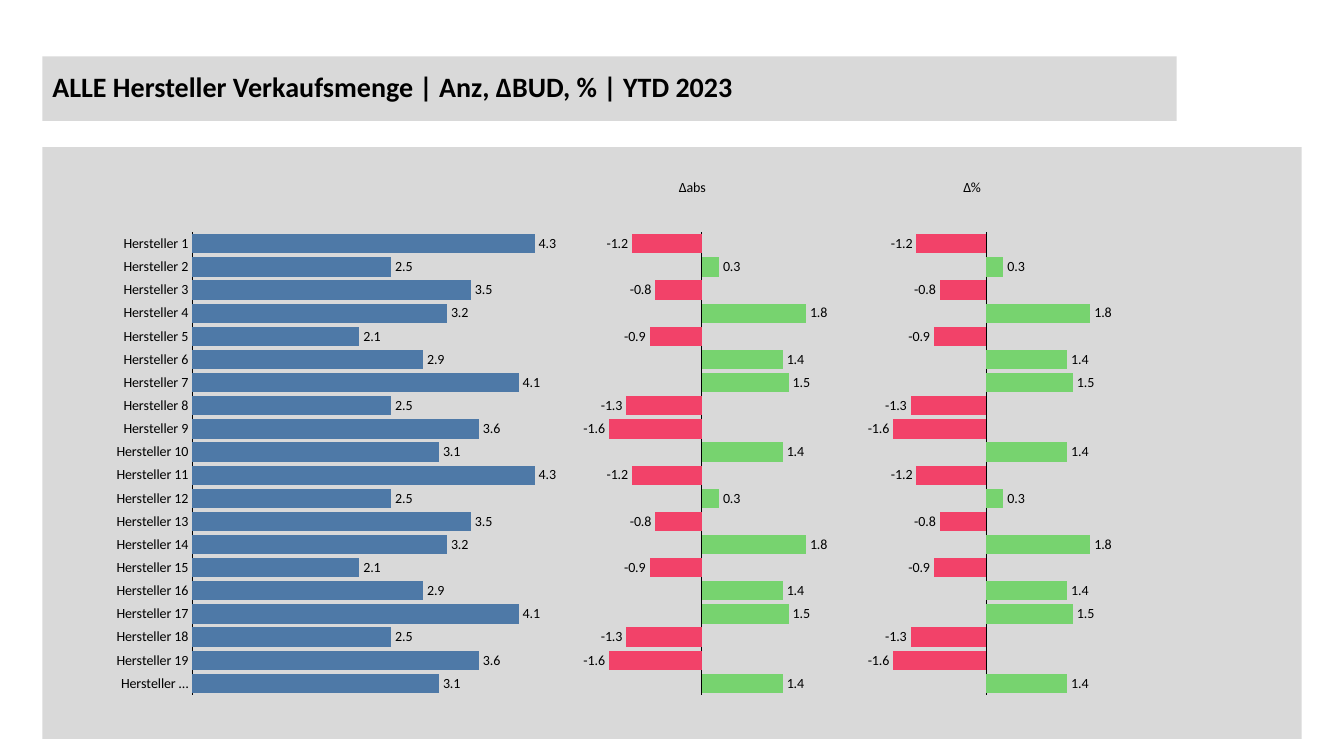
from lxml.etree import SubElement
from pptx import Presentation
from pptx.chart.data import CategoryChartData
from pptx.dml.color import RGBColor
from pptx.enum.chart import XL_CHART_TYPE, XL_LABEL_POSITION, XL_TICK_LABEL_POSITION, XL_TICK_MARK
from pptx.enum.shapes import MSO_SHAPE
from pptx.enum.text import MSO_ANCHOR, PP_ALIGN
from pptx.oxml import parse_xml
from pptx.oxml.ns import nsdecls, qn
from pptx.util import Inches, Pt

COLORS = {
    "panel": "D9D9D9",
    "text": "000000",
    "volume": "4E79A7",
    "gain": "77D36F",
    "loss": "F24269",
}
FONT = "Calibri"
MANUFACTURERS = [f"Hersteller {number}" for number in range(1, 20)] + ["Hersteller …"]
VOLUMES = [4.3, 2.5, 3.5, 3.2, 2.1, 2.9, 4.1, 2.5, 3.6, 3.1] * 2
DELTAS = [-1.2, 0.3, -0.8, 1.8, -0.9, 1.4, 1.5, -1.3, -1.6, 1.4] * 2
DELTA_CATEGORIES = [str(number) for number in range(1, len(DELTAS) + 1)]
PLOT_TOP, PLOT_HEIGHT = 0.138, 0.797


def color(name):
    return RGBColor.from_string(COLORS[name])


def format_font(font, size=10, bold=False):
    font.name = FONT
    font.size = Pt(size)
    font.bold = bold
    font.color.rgb = color("text")


def write_text(para, text, **font_format):
    span = para.add_run()
    span.text = text
    format_font(span.font, **font_format)


def add_panel(page, left, top, width, height):
    panel = page.shapes.add_shape(
        MSO_SHAPE.RECTANGLE, Inches(left), Inches(top), Inches(width), Inches(height)
    )
    panel.shadow.inherit = False
    panel.fill.solid()
    panel.fill.fore_color.rgb = color("panel")
    panel.line.fill.background()
    return panel


def add_title(page, text, left, top, width, height):
    frame = add_panel(page, left, top, width, height).text_frame
    frame.word_wrap = True
    frame.vertical_anchor = MSO_ANCHOR.MIDDLE
    para = frame.paragraphs[0]
    para.alignment = PP_ALIGN.LEFT
    para.line_spacing = 0.9
    write_text(para, text, size=20, bold=True)


def set_layout(parent, index, **settings):
    layout = parent.find(qn("c:layout"))
    if layout is not None:
        parent.remove(layout)
    layout = parse_xml(f"<c:layout {nsdecls('c')}><c:manualLayout/></c:layout>")
    for tag, value in settings.items():
        SubElement(layout[0], qn(f"c:{tag}"), val=str(value))
    parent.insert(index, layout)


def clear_background(chart):
    no_fill = f"<c:spPr {nsdecls('c', 'a')}><a:noFill/><a:ln><a:noFill/></a:ln></c:spPr>"
    body = chart.element.find(qn("c:chart"))
    body.addnext(parse_xml(no_fill))
    body.find(qn("c:plotArea")).append(parse_xml(no_fill))


def add_bar_chart(page, left, top, width, height, categories, values,
                  fill, plot_left, plot_width, minimum, maximum):
    data = CategoryChartData(number_format="#,##0.0")
    data.categories = categories
    data.add_series("Series 1", values)
    chart = page.shapes.add_chart(
        XL_CHART_TYPE.BAR_CLUSTERED,
        Inches(left), Inches(top), Inches(width), Inches(height), data,
    ).chart
    chart.has_legend = False
    chart.has_title = False
    format_font(chart.font)

    category_axis = chart.category_axis
    category_axis.reverse_order = True
    category_axis.has_major_gridlines = False
    category_axis.major_tick_mark = XL_TICK_MARK.NONE
    category_axis.minor_tick_mark = XL_TICK_MARK.NONE
    category_axis.format.line.color.rgb = color("text")
    category_axis.format.line.width = Pt(0.75)
    format_font(category_axis.tick_labels.font)
    value_axis = chart.value_axis
    value_axis.minimum_scale = minimum
    value_axis.maximum_scale = maximum
    value_axis.has_major_gridlines = False
    value_axis.visible = False

    plot = chart.plots[0]
    plot.gap_width = 20
    plot.vary_by_categories = False
    series = plot.series[0]
    series.invert_if_negative = False
    series.format.fill.solid()
    series.format.fill.fore_color.rgb = color(fill)
    labels = series.data_labels
    labels.show_value = True
    labels.number_format = "#,##0.0"
    labels.number_format_is_linked = False
    labels.position = XL_LABEL_POSITION.OUTSIDE_END
    format_font(labels.font)

    plot_area = chart.element.find(qn("c:chart")).find(qn("c:plotArea"))
    set_layout(plot_area, 0, layoutTarget="inner", xMode="edge", yMode="edge",
               x=plot_left, y=PLOT_TOP, w=plot_width, h=PLOT_HEIGHT)
    clear_background(chart)
    return chart


def add_delta_chart(page, heading, left, top, width, height):
    chart = add_bar_chart(
        page, left, top, width, height, DELTA_CATEGORIES, DELTAS,
        fill="gain", plot_left=0.092, plot_width=0.816, minimum=-2, maximum=2,
    )
    chart.category_axis.tick_label_position = XL_TICK_LABEL_POSITION.NONE
    points = chart.plots[0].series[0].points
    for index, value in enumerate(DELTAS):
        if value < 0:
            fill = points[index].format.fill
            fill.solid()
            fill.fore_color.rgb = color("loss")
    chart.has_title = True
    title = chart.chart_title
    write_text(title.text_frame.paragraphs[0], heading)
    title.include_in_layout = False
    set_layout(title._element, 1, xMode="edge", yMode="edge", x=0.4, y=0.04)


def build_sales_page(page):
    left, top, width, height = 0.42, 1.46, 12.49, 5.87
    add_panel(page, left, top, width, height)
    add_title(page, "ALLE Hersteller Verkaufsmenge | Anz, ΔBUD, % | YTD 2023",
              left, 0.56, 11.25, 0.64)
    chart_top, chart_height = top + 0.05, 5.76
    delta_left, delta_width = left + 5.13, 2.82
    add_bar_chart(
        page, left + 0.15, chart_top, 5.71, chart_height, MANUFACTURERS, VOLUMES,
        fill="volume", plot_left=0.234, plot_width=0.692, minimum=0, maximum=5,
    )
    for column, heading in enumerate(["\u00a0∆abs", "\u00a0∆%"]):
        add_delta_chart(page, heading, delta_left + column * delta_width,
                        chart_top, delta_width, chart_height)


def main():
    deck = Presentation()
    deck.slide_width = Inches(13.33)
    deck.slide_height = Inches(7.5)
    build_sales_page(deck.slides.add_slide(deck.slide_layouts[6]))
    deck.save("out.pptx")


if __name__ == "__main__":
    main()
